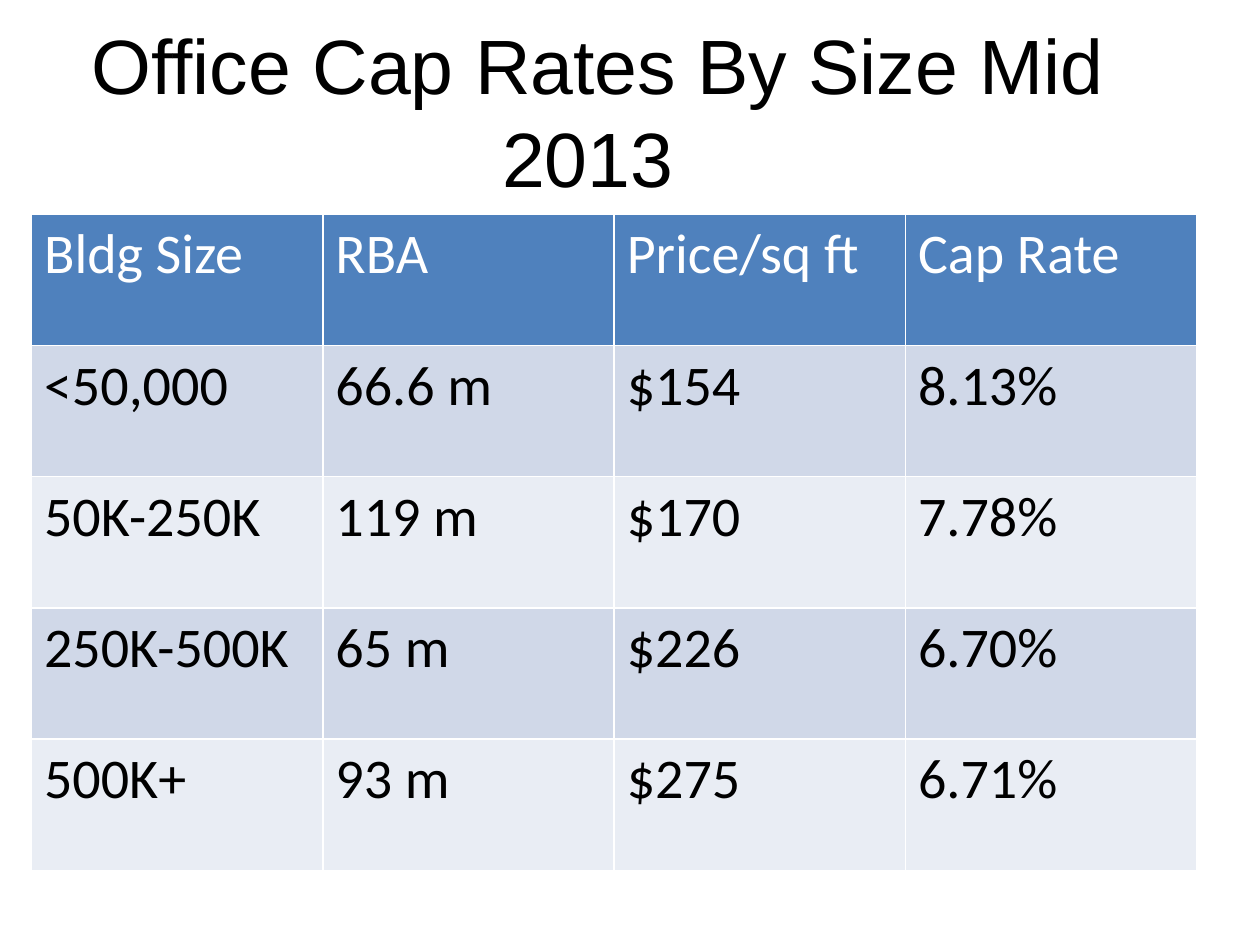
from pptx import Presentation
from pptx.dml.color import RGBColor
from pptx.enum import text
from pptx.util import Inches, Pt

BLACK = RGBColor(0x00, 0x00, 0x00)
WHITE = RGBColor(0xFF, 0xFF, 0xFF)
HEADER_BLUE = RGBColor(0x4F, 0x81, 0xBD)
BANDS = [RGBColor(0xE9, 0xED, 0xF4), RGBColor(0xD0, 0xD8, 0xE8)]

CAP_RATES = [
    ["Bldg Size", "RBA", "Price/sq ft", "Cap Rate"],
    ["<50,000", "66.6 m", "$154", "8.13%"],
    ["50K-250K", "119 m", "$170", "7.78%"],
    ["250K-500K", "65 m", "$226", "6.70%"],
    ["500K+", "93 m", "$275", "6.71%"],
]


def write(frame, words, *, size, font, color, align=text.PP_ALIGN.LEFT):
    paragraph = frame.paragraphs[0]
    paragraph.alignment = align
    run = paragraph.add_run()
    run.text = words
    run.font.size = Pt(size)
    run.font.name = font
    run.font.bold = False
    run.font.color.rgb = color


prs = Presentation()
prs.slide_width, prs.slide_height = Inches(10), Inches(7.5)
slide = prs.slides.add_slide(prs.slide_layouts[5])

title = slide.shapes.title
title.left, title.top = Inches(0.25), Inches(0.25)
title.width, title.height = Inches(9), Inches(1.25)
title.text_frame.vertical_anchor = text.MSO_ANCHOR.MIDDLE
title.text_frame.auto_size = text.MSO_AUTO_SIZE.NONE
# The trailing space takes part in the centring of the second line.
write(title.text_frame, "Office Cap Rates By Size Mid 2013 ", size=44,
      font="Arial", color=BLACK, align=text.PP_ALIGN.CENTER)

# The default table style supplies the white cell borders.
rates = slide.shapes.add_table(
    len(CAP_RATES), len(CAP_RATES[0]),
    Inches(0.25), Inches(1.7), Inches(9.25), Inches(5.21)).table
for row, values in enumerate(CAP_RATES):
    for column, value in enumerate(values):
        cell = rates.cell(row, column)
        cell.fill.solid()
        cell.fill.fore_color.rgb = BANDS[row % 2] if row else HEADER_BLUE
        write(cell.text_frame, value, size=32, font="Calibri",
              color=BLACK if row else WHITE)

prs.save("out.pptx")
